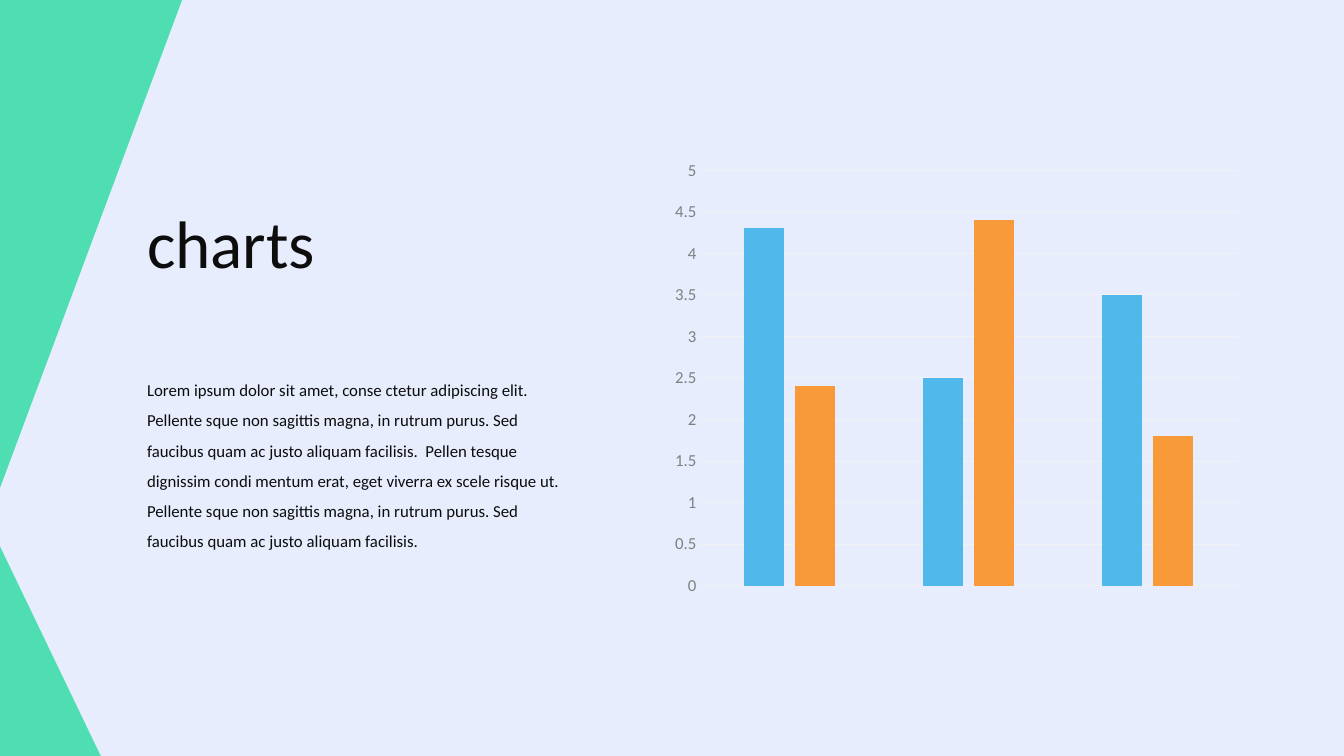
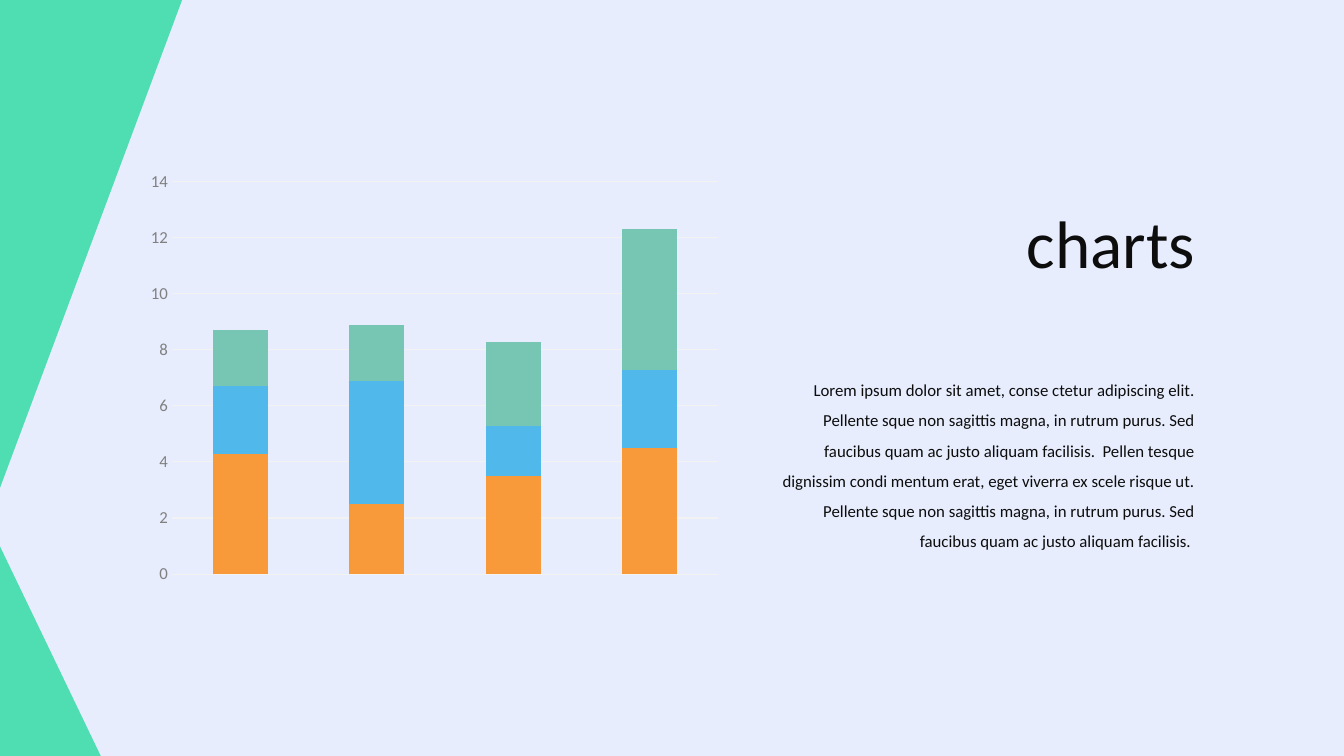
from pptx import Presentation
from pptx.chart.data import CategoryChartData
from pptx.dml.color import RGBColor
from pptx.enum.chart import XL_CHART_TYPE, XL_TICK_MARK
from pptx.enum.shapes import MSO_SHAPE
from pptx.enum.text import PP_ALIGN
from pptx.util import Inches, Pt

CLUSTERED = XL_CHART_TYPE.COLUMN_CLUSTERED
STACKED = XL_CHART_TYPE.COLUMN_STACKED
NO_TICK = XL_TICK_MARK.NONE
TRIANGLE = MSO_SHAPE.RIGHT_TRIANGLE
LEFT, RIGHT = PP_ALIGN.LEFT, PP_ALIGN.RIGHT

FONT = "Calibri"
BACKGROUND, MINT, INK = "E7EDFD", "4FDEB2", "0D0D0D"
AXIS_TEXT, GRID = "808080", "F2F2F2"
BLUE, ORANGE, TEAL = "51B8EB", "F89A3A", "77C6B4"

TITLE = "charts"
BODY = (
    "Lorem ipsum dolor sit amet, conse ctetur adipiscing elit. "
    "Pellente sque non sagittis magna, in rutrum purus. "
    "Sed faucibus quam ac justo aliquam facilisis.  "
    "Pellen tesque dignissim condi mentum erat, eget viverra ex scele risque ut. "
    "Pellente sque non sagittis magna, in rutrum purus. "
    "Sed faucibus quam ac justo aliquam facilisis."
)


def rgb(value):
    return RGBColor.from_string(value)


def inches(box):
    return [Inches(v) for v in box]


def style_font(font, size, color):
    for name, value in {"name": FONT, "size": Pt(size)}.items():
        setattr(font, name, value)
    font.color.rgb = rgb(color)


def add_corner(slide, box, flipped=False):
    """Draw a triangle on the left edge; flipped puts its right angle at the top."""
    sp = slide.shapes.add_shape(TRIANGLE, *inches(box))
    sp.shadow.inherit = False
    sp.fill.solid()
    sp.fill.fore_color.rgb = rgb(MINT)
    sp.line.fill.background()
    if flipped:
        sp._element.spPr.get_or_add_xfrm().set("flipV", "1")


def add_base_slide(prs):
    slide = prs.slides.add_slide(prs.slide_layouts[6])
    add_corner(slide, (0, 5.42, 1, 2.08))
    add_corner(slide, (0, -0.01, 1.81, 4.85), flipped=True)
    return slide


def add_text(slide, box, text, size, align, spacing=1.0):
    tf = slide.shapes.add_textbox(*inches(box)).text_frame
    tf.word_wrap = True
    p = tf.paragraphs[0]
    p.alignment = align
    p.line_spacing = spacing
    r = p.add_run()
    r.text = text
    style_font(r.font, size, INK)


def add_text_column(slide, box, align, body):
    """Place the title and body text in a column, both on its aligned edge."""
    left, top, width, height = box
    title_width, title_height, body_offset = 3.29, 0.91, 1.67
    title_left = left + width - title_width if align == RIGHT else left
    add_text(slide, (title_left, top, title_width, title_height), TITLE, 48, align)
    add_text(slide, (left, top + body_offset, width, height - body_offset),
             body, 12, align, 1.5)


def add_column_chart(slide, box, kind, series, gap, overlap, top_value, step):
    """Add a column chart; series is a list of (colour, values)."""
    data = CategoryChartData()
    data.categories = [str(i + 1) for i in range(len(series[0][1]))]
    for number, (_, values) in enumerate(series, 1):
        data.add_series(f"Series {number}", values)
    chart = slide.shapes.add_chart(kind, *inches(box), data).chart
    chart.has_legend = chart.has_title = False
    style_font(chart.font, 10, "000000")

    plot = chart.plots[0]
    for name, value in {"gap_width": gap, "overlap": overlap,
                        "vary_by_categories": False}.items():
        setattr(plot, name, value)
    for column, (color, _) in zip(plot.series, series):
        column.format.fill.solid()
        column.format.fill.fore_color.rgb = rgb(color)

    chart.category_axis.visible = False
    axis = chart.value_axis
    for name, value in {"minimum_scale": 0, "maximum_scale": top_value,
                        "major_unit": step, "major_tick_mark": NO_TICK,
                        "minor_tick_mark": NO_TICK,
                        "has_major_gridlines": True}.items():
        setattr(axis, name, value)
    style_font(axis.tick_labels.font, 12, AXIS_TEXT)
    axis.format.line.fill.background()
    grid = axis.major_gridlines.format.line
    grid.width = Pt(0.75)
    grid.color.rgb = rgb(GRID)


def build_clustered_slide(prs):
    slide = add_base_slide(prs)
    add_text_column(slide, (1.36, 1.95, 4.42, 3.56), LEFT, BODY)
    series = [(BLUE, (4.3, 2.5, 3.5)), (ORANGE, (2.4, 4.4, 1.8))]
    add_column_chart(slide, (6.58, 1.5, 5.8, 4.5), CLUSTERED, series,
                     gap=219, overlap=-27, top_value=5, step=0.5)


def build_stacked_slide(prs):
    slide = add_base_slide(prs)
    series = [(ORANGE, (4.3, 2.5, 3.5, 4.5)),
              (BLUE, (2.4, 4.4, 1.8, 2.8)),
              (TEAL, (2, 2, 3, 5))]
    add_column_chart(slide, (1.38, 1.62, 5.86, 4.26), STACKED, series,
                     gap=150, overlap=100, top_value=14, step=2)
    add_text_column(slide, (7.53, 1.95, 4.42, 3.56), RIGHT, BODY + " ")


def main():
    prs = Presentation()
    prs.slide_width, prs.slide_height = Inches(13.33), Inches(7.5)
    fill = prs.slide_master.background.fill
    fill.solid()
    fill.fore_color.rgb = rgb(BACKGROUND)
    build_clustered_slide(prs)
    build_stacked_slide(prs)
    prs.save("out.pptx")


if __name__ == "__main__":
    main()
